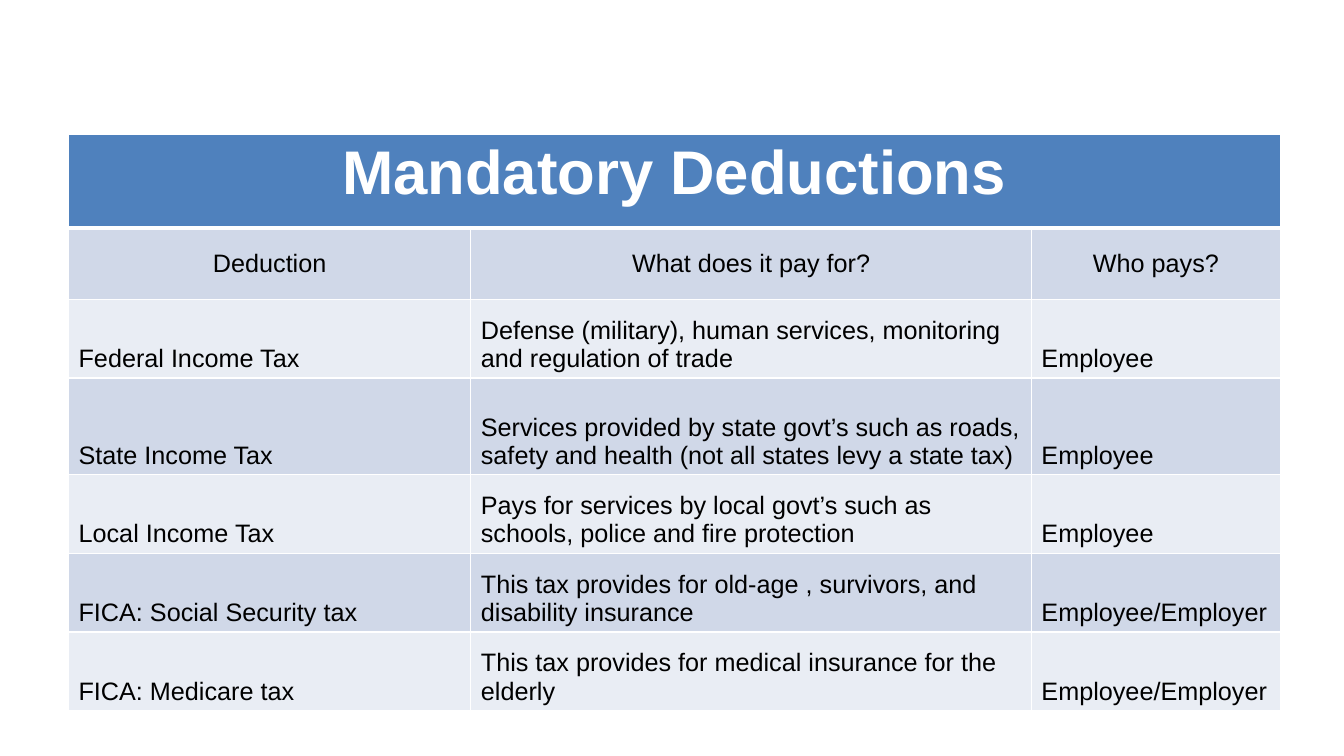
from lxml import etree
from pptx import Presentation, util as u
from pptx.dml.color import RGBColor
from pptx.enum import text
from pptx.oxml.ns import qn

# Content
TITLE = "Mandatory Deductions"
HEADINGS = ("Deduction", "What does it pay for?", "Who pays?")
DEDUCTIONS = [
    ("Federal Income Tax",
     "Defense (military), human services, monitoring and regulation of trade",
     "Employee"),
    ("State Income Tax",
     "Services provided by state govt’s such as roads, safety and health "
     "(not all states levy a state tax)",
     "Employee"),
    ("Local Income Tax",
     "Pays for services by local govt’s such as schools, police and fire protection",
     "Employee"),
    ("FICA: Social Security tax",
     "This tax provides for old-age , survivors, and disability insurance",
     "Employee/Employer"),
    ("FICA: Medicare tax",
     "This tax provides for medical insurance for the elderly",
     "Employee/Employer"),
]

# Grid and formats
LEFT, TOP = 0.68, 1.33
COLUMNS = (3.99, 5.56, 2.47)
ROWS = (0.93, 0.71, 0.78, 0.96, 0.78, 0.78, 0.78)
BANDS = ("E9EDF4", "D0D8E8")
TITLE_FILL, WHITE, BLACK = "4F81BD", "FFFFFF", "000000"
THIN, THICK = 1, 3
TITLE_FONT = {"name": "Arial", "size": u.Pt(44), "bold": True}
BODY_FONT = {"name": "Arial", "size": u.Pt(18), "bold": False}
CENTER, ANCHOR = text.PP_ALIGN.CENTER, text.MSO_ANCHOR


def color(value):
    return RGBColor.from_string(value)


def draw_borders(cell, widths):
    """Put white lines on the cell's left, right, top and bottom."""
    properties = cell._tc.get_or_add_tcPr()
    for index, (side, width) in enumerate(zip("LRTB", widths)):
        line = etree.Element(qn(f"a:ln{side}"), w=str(u.Pt(width)))
        fill = etree.SubElement(line, qn("a:solidFill"))
        etree.SubElement(fill, qn("a:srgbClr"), val=WHITE)
        properties.insert(index, line)


def write_cell(cell, words, font, ink, align, anchor):
    cell.vertical_anchor = anchor
    para = cell.text_frame.paragraphs[0]
    para.alignment = align
    span = para.add_run()
    span.text = words
    for name, value in font.items():
        setattr(span.font, name, value)
    span.font.color.rgb = color(ink)


deck = Presentation()
deck.slide_width, deck.slide_height = u.Inches(13.33), u.Inches(7.5)
page = deck.slides.add_slide(deck.slide_layouts[6])

# Table frame
frame = page.shapes.add_table(
    len(ROWS), len(COLUMNS), u.Inches(LEFT), u.Inches(TOP),
    u.Inches(sum(COLUMNS)), u.Inches(sum(ROWS)))
table = frame.table
for column, width in zip(table.columns, COLUMNS):
    column.width = u.Inches(width)
for row, height in zip(table.rows, ROWS):
    row.height = u.Inches(height)

# Fills and borders, with a thick line under the title row
for row_index, row in enumerate(table.rows):
    for cell in row.cells:
        cell.fill.solid()
        cell.fill.fore_color.rgb = color(
            BANDS[row_index % 2] if row_index else TITLE_FILL)
        draw_borders(cell, (THIN, THIN,
                            THICK if row_index == 1 else THIN,
                            THICK if row_index == 0 else THIN))

# Title row across all columns
table.cell(0, 0).merge(table.cell(0, len(COLUMNS) - 1))
write_cell(table.cell(0, 0), TITLE, TITLE_FONT, WHITE, CENTER, ANCHOR.TOP)

# Headings and deductions
for row_index, entries in enumerate([HEADINGS, *DEDUCTIONS], start=1):
    heading = row_index == 1
    for column_index, words in enumerate(entries):
        write_cell(table.cell(row_index, column_index), words, BODY_FONT, BLACK,
                   CENTER if heading else text.PP_ALIGN.LEFT,
                   ANCHOR.MIDDLE if heading else ANCHOR.BOTTOM)

deck.save("out.pptx")
